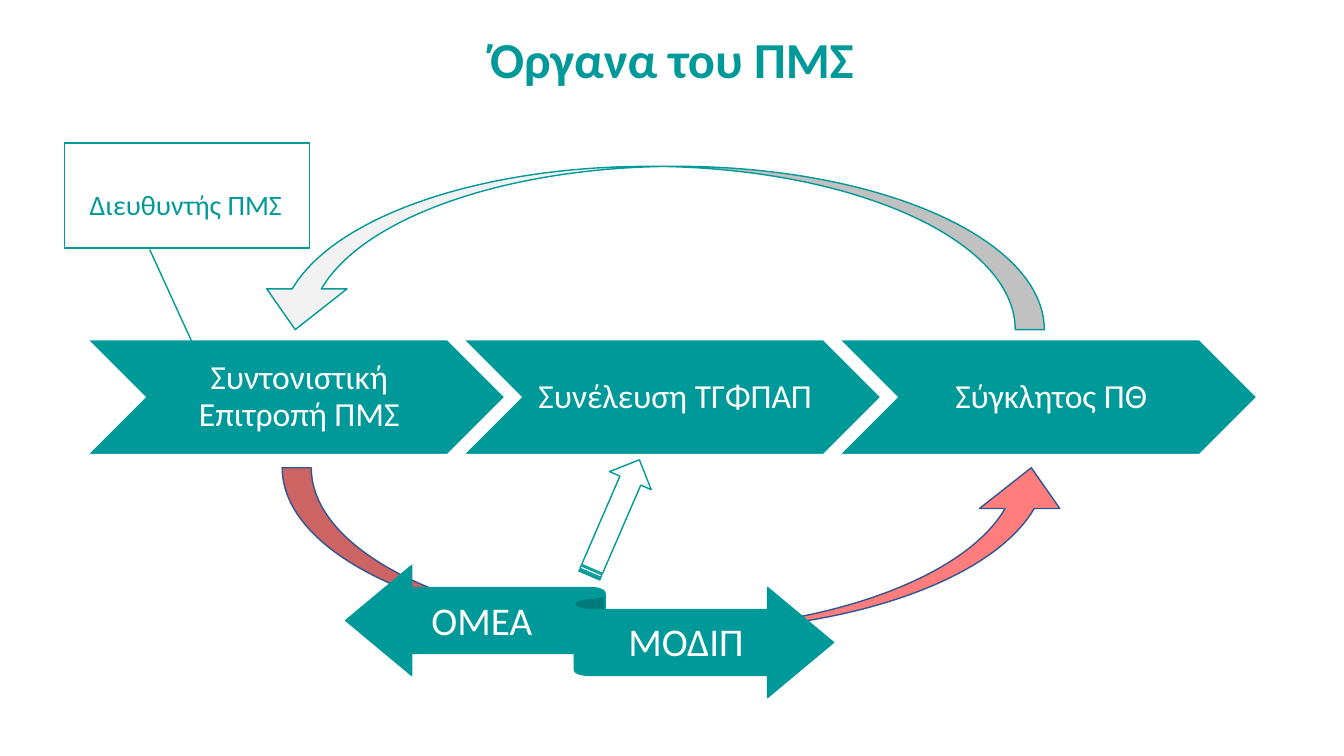
from pptx import Presentation
from pptx.dml.color import RGBColor
from pptx.enum.shapes import MSO_SHAPE as Preset
from pptx.enum.text import MSO_ANCHOR as Anchor, PP_ALIGN as Align
from pptx.util import Inches, Pt

TEAL = RGBColor(0x00, 0x99, 0x99)
WHITE = RGBColor(0xFF, 0xFF, 0xFF)
CORAL = RGBColor(0xFF, 0x7D, 0x7D)
PALE_GREY = RGBColor(0xF2, 0xF2, 0xF2)
NAVY = RGBColor(0x32, 0x54, 0x91)

COLUMNS, ROWS = 133.33, 75
CURVE = (0.178, 0.492, 0.25)
STEP_INSETS = (1, 0.4, 0.4, 0.4)
RIBBON_INSETS = (0, 1.1, 0, 1.2)


class Diagram:
    """Draws styled elements on a slide grid with cells of a tenth of an inch."""

    font_name = "Calibri"
    cell = Inches(0.1)

    def __init__(self, deck):
        deck.slide_width = self.length(COLUMNS)
        deck.slide_height = self.length(ROWS)
        self.shapes = deck.slides.add_slide(deck.slide_layouts[6]).shapes

    def length(self, cells):
        return round(cells * self.cell)

    def place(self, area):
        return [self.length(cells) for cells in area]

    def shape(self, preset, area, fill=None, line=TEAL, adjust=(), rotation=0):
        figure = self.shapes.add_shape(preset, *self.place(area))
        figure.shadow.inherit = False
        figure.rotation = rotation
        for index, value in enumerate(adjust):
            figure.adjustments[index] = value
        if fill is None:
            figure.fill.background()
        else:
            figure.fill.solid()
            figure.fill.fore_color.rgb = fill
        figure.line.color.rgb = line
        figure.line.width = Pt(1)

    def text(self, wording, area, size, color=WHITE, bold=False, align=Align.CENTER,
             anchor=Anchor.MIDDLE, spacing=0.9, insets=(1, 0.5, 1, 0.5), wrap=True):
        frame = self.shapes.add_textbox(*self.place(area)).text_frame
        frame.word_wrap = wrap
        frame.vertical_anchor = anchor
        (frame.margin_left, frame.margin_top,
         frame.margin_right, frame.margin_bottom) = self.place(insets)
        frame.text = wording
        paragraph = frame.paragraphs[0]
        paragraph.alignment = align
        paragraph.line_spacing = spacing
        font = paragraph.runs[0].font
        font.name, font.size, font.bold = self.font_name, Pt(size), bold
        font.color.rgb = color

    def step(self, wording, left):
        self.shape(Preset.CHEVRON, (left, 33.7, 41.4, 11.4), TEAL, WHITE)
        self.text(wording, (left + 5.7, 33.7, 30, 11.4), 24, insets=STEP_INSETS)


def main():
    deck = Presentation()
    diagram = Diagram(deck)
    diagram.text("Όργανα του ΠΜΣ", (0, 3.5, COLUMNS, 5.8), 36, TEAL, bold=True,
                 anchor=Anchor.BOTTOM, spacing=1.14)

    bodies = ("Συντονιστική Επιτροπή ΠΜΣ", "Συνέλευση ΤΓΦΠΑΠ", "Σύγκλητος ΠΘ")
    for index, body in enumerate(bodies):
        diagram.step(body, 8.7 + index * 37.3)

    diagram.shape(Preset.CURVED_UP_ARROW, (28, 46.4, 78.3, 16.2), CORAL, NAVY, CURVE)
    diagram.shape(Preset.CURVED_UP_ARROW, (25.3, 16.5, 78.3, 16.2), PALE_GREY,
                  adjust=CURVE, rotation=180)

    diagram.shape(Preset.LINE_CALLOUT_1, (6.4, 14.2, 24.3, 10.4),
                  adjust=(1.015, 0.348, 2.263, 0.592))
    diagram.text("Διευθυντής ΠΜΣ", (7.9, 18.1, 21.3, 4.4), 20, TEAL, align=Align.LEFT,
                 anchor=Anchor.TOP, spacing=1.0, wrap=False)

    diagram.shape(Preset.LEFT_RIGHT_RIBBON, (34.3, 56.1, 48.4, 13.1), TEAL)
    diagram.text("ΟΜΕΑ", (37.4, 58.5, 20.8, 6.6), 28, insets=RIBBON_INSETS)
    diagram.text("ΜΟΔΙΠ", (58.3, 61.3, 19.5, 5.3), 28, insets=RIBBON_INSETS)
    diagram.shape(Preset.STRIPED_RIGHT_ARROW, (54.7, 49.1, 12.5, 4.5), rotation=293.4)

    deck.save("out.pptx")


if __name__ == "__main__":
    main()
